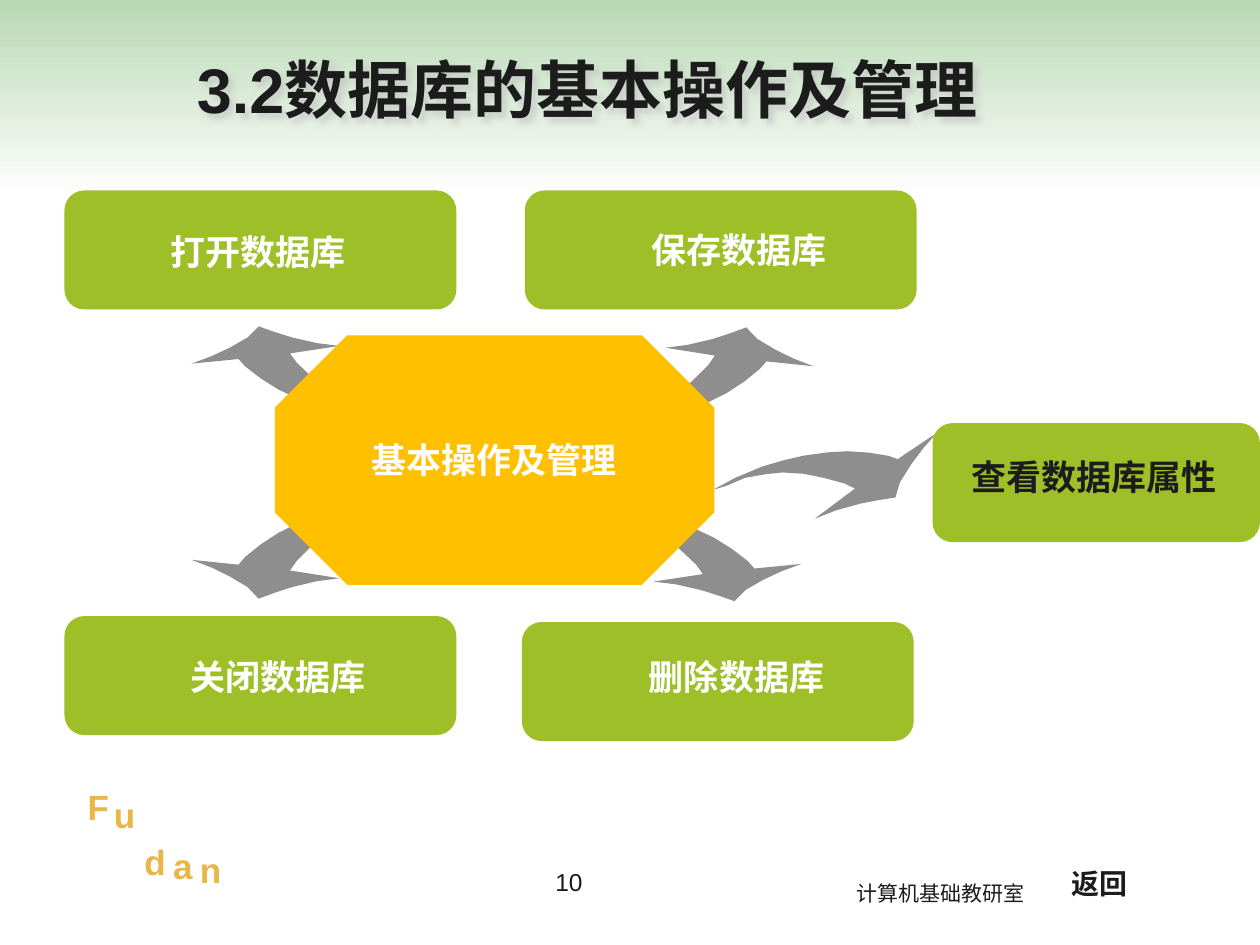
from math import isclose
from lxml.etree import fromstring
from pptx import Presentation
from pptx.dml.color import RGBColor
from pptx.enum.shapes import MSO_SHAPE
from pptx.enum.text import MSO_ANCHOR, PP_ALIGN
from pptx.oxml.ns import qn
from pptx.util import Cm, Pt

NS = "http://schemas.openxmlformats.org/drawingml/2006/main"
CJK, ARIAL = "Noto Sans CJK SC", "Arial"
GREEN, AMBER, GRAY, INK, WHITE, GOLD = "9EBF27", "FFC000", "8E8E8E", "1C1C1C", "FFFFFF", "E9B64A"
GLOW = '<a:glow rad="63500"><a:srgbClr val="FFC000"><a:alpha val="40000"/></a:srgbClr></a:glow>'
SHADOW = ('<a:outerShdw blurRad="38100" dist="38100" dir="2700000">'
          '<a:srgbClr val="C0C0C0"><a:alpha val="60000"/></a:srgbClr></a:outerShdw>')

TITLE = "3.2数据库的基本操作及管理"
BOXES = [
    (1.3, 3.84, 7.9, 2.4), (10.58, 3.84, 7.9, 2.4),
    (1.3, 12.42, 7.9, 2.4), (10.52, 12.54, 7.9, 2.4),
    (18.8, 8.53, 6.6, 2.4),
]
LABELS = [
    ("打开数据库", 3.15, 4.52, 4.1, WHITE), ("保存数据库", 12.85, 4.48, 4.1, WHITE),
    ("关闭数据库", 3.55, 13.08, 4.1, WHITE), ("删除数据库", 12.8, 13.08, 4.1, WHITE),
    ("基本操作及管理", 7.18, 8.71, 5.55, WHITE), ("查看数据库属性", 19.28, 9.06, 5.55, INK),
]
ARROWS = [
    (11.88, 6.6, 1.96, False, True, 0), (11.64, 10.24, 1.88, False, False, 0),
    (3.86, 10.11, 1.96, True, False, 0), (3.86, 6.58, 1.88, True, True, 0),
    (14.55, 8.69, 1.88, False, False, -28.3),
]
ARROW_W = 4.52
ARROW_OUTLINE = [
    (0, 0), (11, 0), (24, 3), (34, 8), (43, 14), (53, 23), (61, 32), (69, 44), (76, 57),
    (79, 65), (100, 60), (91, 68), (83, 77), (75, 88), (70, 100), (63, 94), (55, 88),
    (44, 82), (34, 79), (56, 71), (53, 61), (46, 45), (39, 31), (31, 19), (24, 12),
    (15, 5), (6, 3),
]
LETTERS = [("F", 0.79, 15.72), ("u", 1.32, 15.88), ("d", 1.93, 16.81),
           ("a", 2.49, 16.89), ("n", 3.05, 16.99)]


def paint(shape, color):
    shape.shadow.inherit = False
    shape.fill.solid()
    shape.fill.fore_color.rgb = RGBColor.from_string(color)
    shape.line.fill.background()


def add_effect(shape, xml):
    shape.element.spPr.append(fromstring(f'<a:effectLst xmlns:a="{NS}">{xml}</a:effectLst>'))


def write(shape, text, size=20, color=INK, bold=True, font=CJK,
          align=PP_ALIGN.CENTER, anchor=MSO_ANCHOR.TOP):
    tf = shape.text_frame
    tf.word_wrap = True
    tf.vertical_anchor = anchor
    p = tf.paragraphs[0]
    p.alignment = align
    r = p.add_run()
    r.text = text
    r.font.size = Pt(size)
    r.font.bold = bold
    r.font.name = font
    r.font.color.rgb = RGBColor.from_string(color)
    ea = r.font._element.makeelement(qn("a:ea"), {"typeface": CJK if font == ARIAL else font})
    r.font._element.find(qn("a:latin")).addnext(ea)


def add_text(s, text, x, y, w, h, **style):
    box = s.shapes.add_textbox(Cm(x), Cm(y), Cm(w), Cm(h))
    write(box, text, **style)
    return box


def add_arrow(s, x, y, h, flip_x, flip_y, angle):
    points = [
        (Cm(x + ARROW_W * (100 - px if flip_x else px) / 100),
         Cm(y + h * (100 - py if flip_y else py) / 100))
        for px, py in ARROW_OUTLINE
    ]
    builder = s.shapes.build_freeform(*points[0])
    builder.add_line_segments(points[1:])
    arrow = builder.convert_to_shape()
    if not isclose(angle, 0):
        arrow.rotation = angle
    paint(arrow, GRAY)


def main():
    prs = Presentation()
    prs.slide_width, prs.slide_height = Cm(25.4), Cm(19.05)
    s = prs.slides.add_slide(prs.slide_layouts[5])

    band = s.shapes.add_shape(MSO_SHAPE.RECTANGLE, 0, 0, prs.slide_width, Cm(3.99))
    paint(band, WHITE)
    band.fill.gradient()
    band.fill.gradient_angle = 270
    for stop, color in zip(band.fill.gradient_stops, ("B8D8B3", WHITE)):
        stop.color.rgb = RGBColor.from_string(color)
    s.shapes.element.insert(2, band.element)

    title = s.shapes.title
    title.left, title.top, title.width, title.height = Cm(0.66), Cm(0.56), Cm(24.13), Cm(2.46)
    title.text_frame.margin_right = Cm(2.03)
    write(title, TITLE, size=36, font=ARIAL, anchor=MSO_ANCHOR.MIDDLE)
    add_effect(title, SHADOW)

    for arrow in ARROWS:
        add_arrow(s, *arrow)

    hub = s.shapes.add_shape(MSO_SHAPE.OCTAGON, Cm(5.54), Cm(6.76), Cm(8.86), Cm(5.03))
    hub.adjustments[0] = 0.29
    paint(hub, AMBER)
    for box in BOXES:
        paint(s.shapes.add_shape(MSO_SHAPE.ROUNDED_RECTANGLE, *map(Cm, box)), GREEN)
    for text, x, y, w, color in LABELS:
        add_text(s, text, x, y, w, 1.12, color=color)

    for letter, x, y in LETTERS:
        add_effect(add_text(s, letter, x, y, 2.39, 1.12, color=GOLD, font=ARIAL), GLOW)

    add_text(s, "10", 8.51, 17.35, 5.92, 1.32, size=14, bold=False, font=ARIAL)
    add_text(s, "计算机基础教研室", 17.02, 17.63, 4.34, 0.76, size=12, bold=False,
             font="Noto Sans CJK JP", align=PP_ALIGN.LEFT)
    add_text(s, "返回", 21.36, 17.35, 1.88, 0.94, size=16, font=ARIAL, align=PP_ALIGN.LEFT)

    prs.save("out.pptx")


if __name__ == "__main__":
    main()
